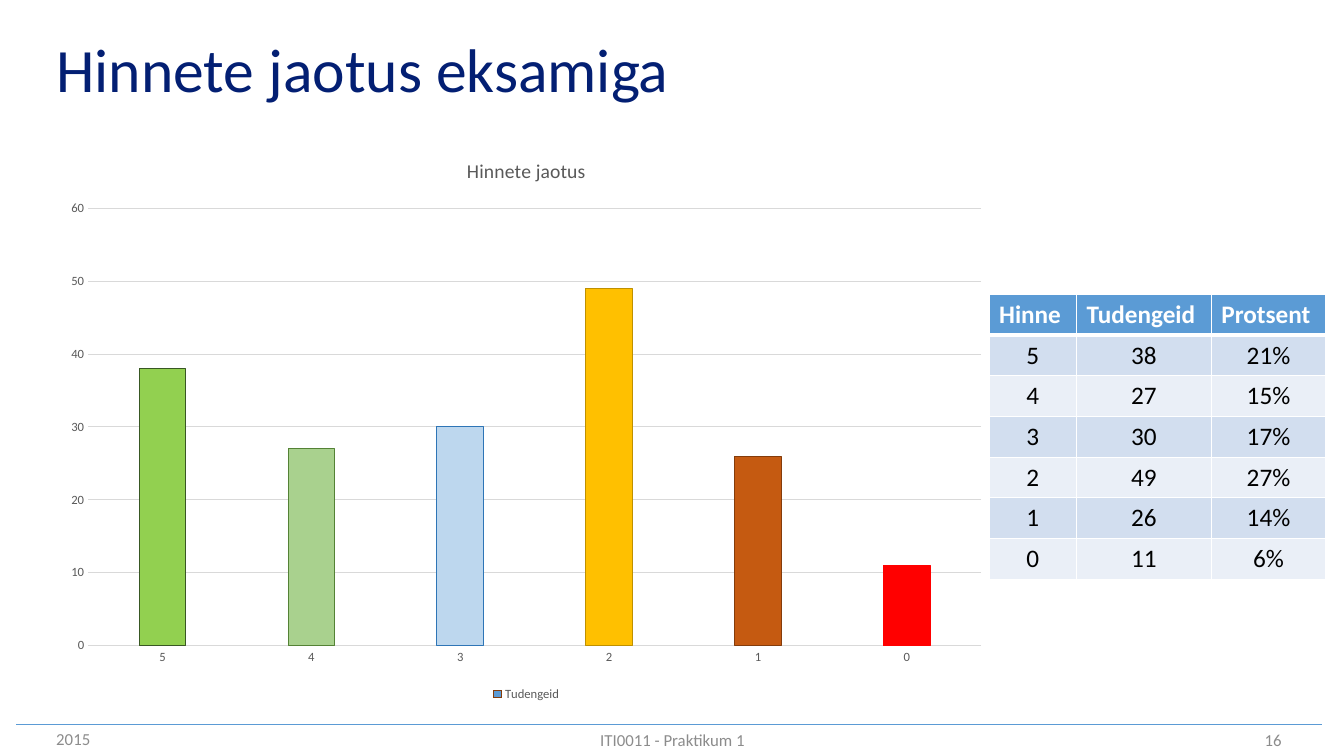
"""Build the slide showing how grades were distributed with the exam."""
from lxml import etree
from pptx import Presentation
from pptx.chart.data import CategoryChartData
from pptx.dml.color import RGBColor
from pptx.enum.chart import XL_CHART_TYPE, XL_LEGEND_POSITION, XL_TICK_MARK
from pptx.enum.text import MSO_ANCHOR, PP_ALIGN
from pptx.oxml.ns import qn
from pptx.util import Inches, Pt

COLUMNS = XL_CHART_TYPE.COLUMN_CLUSTERED
BOTTOM = XL_LEGEND_POSITION.BOTTOM
NO_TICK = XL_TICK_MARK.NONE
MIDDLE = MSO_ANCHOR.MIDDLE
LEFT, CENTER, RIGHT = PP_ALIGN.LEFT, PP_ALIGN.CENTER, PP_ALIGN.RIGHT

FONT = "Calibri"
COLORS = {
    "title": "031F73", "footer": "8C8C8C", "accent": "5B9BD5",
    "white": "FFFFFF", "black": "000000", "label": "595959",
    "grid": "D9D9D9", "odd": "D2DEEF", "even": "EAEFF7", "series": "843C0B",
}
HEADING = "Hinnete jaotus eksamiga"
CHART_TITLE = "Hinnete jaotus"
HEADERS = ("Hinne", "Tudengeid", "Protsent")
GRADES = [
    ("5", 38, "21%", "92D050", "385723"),
    ("4", 27, "15%", "A9D18E", "548235"),
    ("3", 30, "17%", "BDD7EE", "2E75B6"),
    ("2", 49, "27%", "FFC000", "BF9000"),
    ("1", 26, "14%", "C55A11", "843C0B"),
    ("0", 11, "6%", "FF0000", "FF0000"),
]

# Percent of slide width and height: left, top, width, height
HEADING_AREA = (3.45, 2, 92.72, 15.2)
CHART_AREA = (3.9, 18.13, 70.52, 75.2)
TABLE_AREA = (73.59, 38.93, 25.06, 37.73)
COLUMN_SHARES = (0.26, 0.4, 0.34)
RULE = (1.2, 98.35, 95.87)
FOOTERS = [
    ("2015", (3.45, 96.13, 23.41, 3.2), LEFT),
    ("ITI0011 - Praktikum 1", (33.16, 96.27, 33.76, 3.2), CENTER),
    ("16", (73.59, 96.27, 22.51, 3.2), RIGHT),
]

deck = Presentation()
deck.slide_width, deck.slide_height = Inches(13.33), Inches(7.5)
slide = deck.slides.add_slide(deck.slide_layouts[6])


def across(percent):
    return round(deck.slide_width * percent / 100)


def down(percent):
    return round(deck.slide_height * percent / 100)


def place(area):
    left, top, width, height = area
    return across(left), down(top), across(width), down(height)


def rgb(name):
    return RGBColor.from_string(COLORS.get(name, name))


def style_font(font, size, color, bold=False):
    font.name, font.size, font.bold = FONT, Pt(size), bold
    font.color.rgb = rgb(color)


def write(frame, text, size=18, color="black", bold=False, align=LEFT, spacing=1.0):
    frame.word_wrap = True
    paragraph = frame.paragraphs[0]
    paragraph.alignment, paragraph.line_spacing = align, spacing
    run = paragraph.add_run()
    run.text = text
    style_font(run.font, size, color, bold)


def add_text(text, area, **style):
    frame = slide.shapes.add_textbox(*place(area)).text_frame
    frame.vertical_anchor = MIDDLE
    write(frame, text, **style)


def draw_line(line, color, width):
    line.color.rgb = rgb(color)
    line.width = Pt(width)


def border_cell(cell, bottom_width, top_width):
    properties = cell._tc.get_or_add_tcPr()
    for side, width in (("L", 1), ("R", 1), ("T", top_width), ("B", bottom_width)):
        edge = etree.SubElement(properties, qn(f"a:ln{side}"), w=str(Pt(width)))
        fill = etree.SubElement(edge, qn("a:solidFill"))
        etree.SubElement(fill, qn("a:srgbClr"), val=COLORS["white"])


def add_rule():
    start, end, level = RULE
    rule = slide.shapes.add_connector(1, across(start), down(level), across(end), down(level))
    draw_line(rule.line, "accent", 0.5)
    etree.SubElement(rule._element.spPr, qn("a:effectLst"))


def add_table():
    rows = [HEADERS] + [(grade, str(count), share) for grade, count, share, *_ in GRADES]
    left, top, width, height = place(TABLE_AREA)
    table = slide.shapes.add_table(len(rows), len(HEADERS), left, top, width, height).table
    for column, share in zip(table.columns, COLUMN_SHARES):
        column.width = round(width * share)
    for r, values in enumerate(rows):
        table.rows[r].height = height // len(rows)
        header = r == 0
        band = "accent" if header else ("even", "odd")[r % 2]
        for c, value in enumerate(values):
            cell = table.cell(r, c)
            border_cell(cell, 3 if header else 1, 3 if r == 1 else 1)
            cell.fill.solid()
            cell.fill.fore_color.rgb = rgb(band)
            write(cell.text_frame, value, color="white" if header else "black",
                  bold=header, align=LEFT if header else CENTER)


def add_chart():
    data = CategoryChartData()
    data.categories = [grade[0] for grade in GRADES]
    data.add_series(HEADERS[1], [grade[1] for grade in GRADES])
    chart = slide.shapes.add_chart(COLUMNS, *place(CHART_AREA), data).chart
    style_font(chart.font, 10, "black")
    chart.has_title = True
    write(chart.chart_title.text_frame, CHART_TITLE, size=14, color="label", align=CENTER)
    chart.chart_title.include_in_layout = False
    chart.has_legend = True
    chart.legend.position = BOTTOM
    chart.legend.include_in_layout = False
    style_font(chart.legend.font, 9, "label")

    for axis in (chart.category_axis, chart.value_axis):
        axis.major_tick_mark = axis.minor_tick_mark = NO_TICK
        style_font(axis.tick_labels.font, 9, "label")
    draw_line(chart.category_axis.format.line, "grid", 0.75)
    counts = chart.value_axis
    counts.minimum_scale, counts.maximum_scale, counts.major_unit = 0, 60, 10
    counts.format.line.fill.background()
    counts.has_major_gridlines = True
    draw_line(counts.major_gridlines.format.line, "grid", 0.75)

    plot = chart.plots[0]
    plot.gap_width, plot.overlap, plot.vary_by_categories = 219, -27, False
    students = plot.series[0]
    bars = [(students, "accent", "series")]
    bars += [(students.points[i], fill, edge) for i, (*_, fill, edge) in enumerate(GRADES)]
    for bar, fill, edge in bars:
        bar.format.fill.solid()
        bar.format.fill.fore_color.rgb = rgb(fill)
        draw_line(bar.format.line, edge, 0.75)


add_rule()
add_text(HEADING, HEADING_AREA, size=44, color="title", spacing=0.9)
for label, area, align in FOOTERS:
    add_text(label, area, size=12, color="footer", align=align)
add_table()
add_chart()
deck.save("out.pptx")
